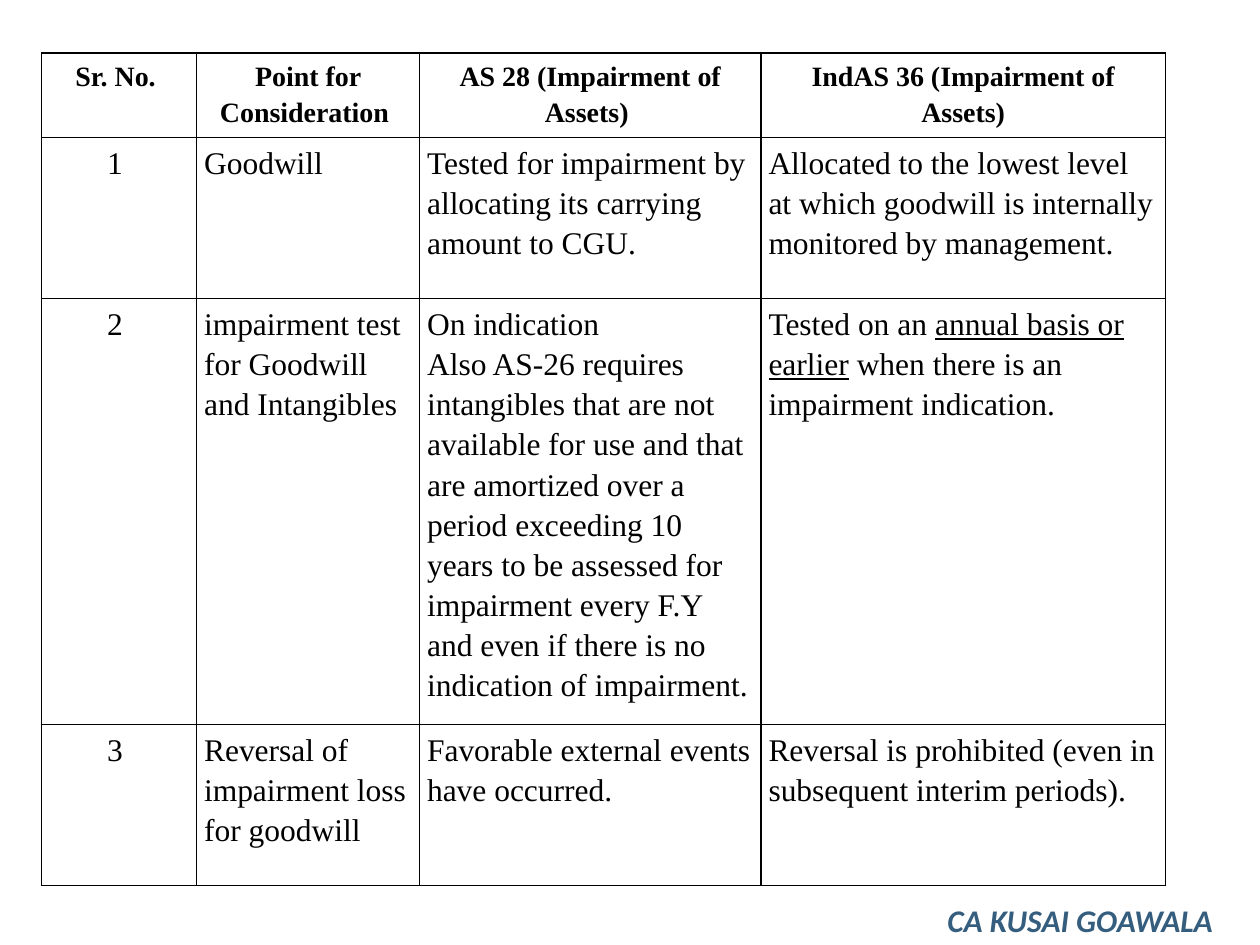
from lxml import etree
from pptx import Presentation
from pptx import util as u
from pptx.dml.color import RGBColor
from pptx.enum import text
from pptx.oxml import ns

COLS = [1.23, 1.77, 2.71, 3.21]
ROWS = [0.67, 1.28, 3.38, 1.28]
HEADER = ["Sr. No. ", "Point for Consideration ",
          "AS 28 (Impairment of Assets) ", "IndAS 36 (Impairment of Assets)"]
POINTS = [
    ["1 ", "Goodwill",
     "Tested for impairment by allocating its carrying amount to CGU.",
     "Allocated to the lowest level at which goodwill is internally "
     "monitored by management."],
    ["2 ", "impairment test for Goodwill and Intangibles",
     "On indication\nAlso AS-26 requires intangibles that are not available "
     "for use and that are amortized over a period exceeding 10 years to be "
     "assessed for impairment every F.Y and even if there is no indication "
     "of impairment.",
     "Tested on an |annual basis or earlier| when there is an impairment "
     "indication."],
    ["3 ", "Reversal of impairment loss for goodwill",
     "Favorable external events have occurred.",
     "Reversal is prohibited (even in subsequent interim periods)."],
]


def color(value):
    """Turn a hex string into a colour."""
    return RGBColor.from_string(value)


def add_run(p, words, size, name, fill, bold=False, italic=False, underline=False):
    """Add one styled run to a paragraph."""
    r = p.add_run()
    r.text = words
    font = r.font
    font.size, font.name = u.Pt(size), name
    font.bold, font.italic, font.underline = bold, italic, underline
    font.color.rgb = color(fill)


def border_cell(cell, fill="000000", width=1):
    """Draw a solid line on all four sides of a cell."""
    tc_pr = cell._tc.get_or_add_tcPr()
    for i, side in enumerate(("a:lnL", "a:lnR", "a:lnT", "a:lnB")):
        ln = etree.Element(ns.qn(side), w=str(u.Pt(width)))
        solid = etree.SubElement(ln, ns.qn("a:solidFill"))
        etree.SubElement(solid, ns.qn("a:srgbClr"), val=fill)
        tc_pr.insert(i, ln)


def fill_cell(cell, words, size, bold, centred):
    """Write a cell: newlines part paragraphs, bars enclose underlined words."""
    cell.margin_left = cell.margin_right = u.Inches(0.06)
    cell.margin_top = cell.margin_bottom = u.Inches(0.03)
    cell.fill.background()
    border_cell(cell)
    tf = cell.text_frame
    for i, line in enumerate(words.split("\n")):
        p = tf.add_paragraph() if i else tf.paragraphs[0]
        p.line_spacing = 1.15
        p.alignment = text.PP_ALIGN.CENTER if centred else text.PP_ALIGN.LEFT
        for j, part in enumerate(line.split("|")):
            add_run(p, part, size, "Times New Roman", "000000", bold,
                    underline=j % 2 == 1)


def add_comparison(s, left, top):
    """Place the table comparing the two standards."""
    table = s.shapes.add_table(len(ROWS), len(COLS), u.Inches(left), u.Inches(top),
                               u.Inches(sum(COLS)), u.Inches(sum(ROWS))).table
    table.horz_banding = False
    for column, width in zip(table.columns, COLS):
        column.width = u.Inches(width)
    for i, (row, height) in enumerate(zip(table.rows, ROWS)):
        row.height = u.Inches(height)
        for j, words in enumerate([HEADER, *POINTS][i]):
            header = i == 0
            fill_cell(table.cell(i, j), words, 16 if header else 18, header,
                      header or j == 0)


def add_author(s, left, top, width, height):
    """Place the author's name in its box."""
    sp = s.shapes.add_textbox(*map(u.Inches, (left, top, width, height)))
    tf = sp.text_frame
    tf.word_wrap = True
    tf.auto_size = text.MSO_AUTO_SIZE.SHAPE_TO_FIT_TEXT
    add_run(tf.paragraphs[0], "CA KUSAI GOAWALA", 18, "Calibri", "355D7E",
            bold=True, italic=True)


def main():
    """Build and save the slide."""
    prs = Presentation()
    prs.slide_width, prs.slide_height = u.Inches(10), u.Inches(7.5)
    s = prs.slides.add_slide(prs.slide_layouts[6])
    add_comparison(s, 0.33, 0.42)
    add_author(s, 7.42, 7.1, 2.58, 0.4)
    prs.save("out.pptx")


if __name__ == "__main__":
    main()
